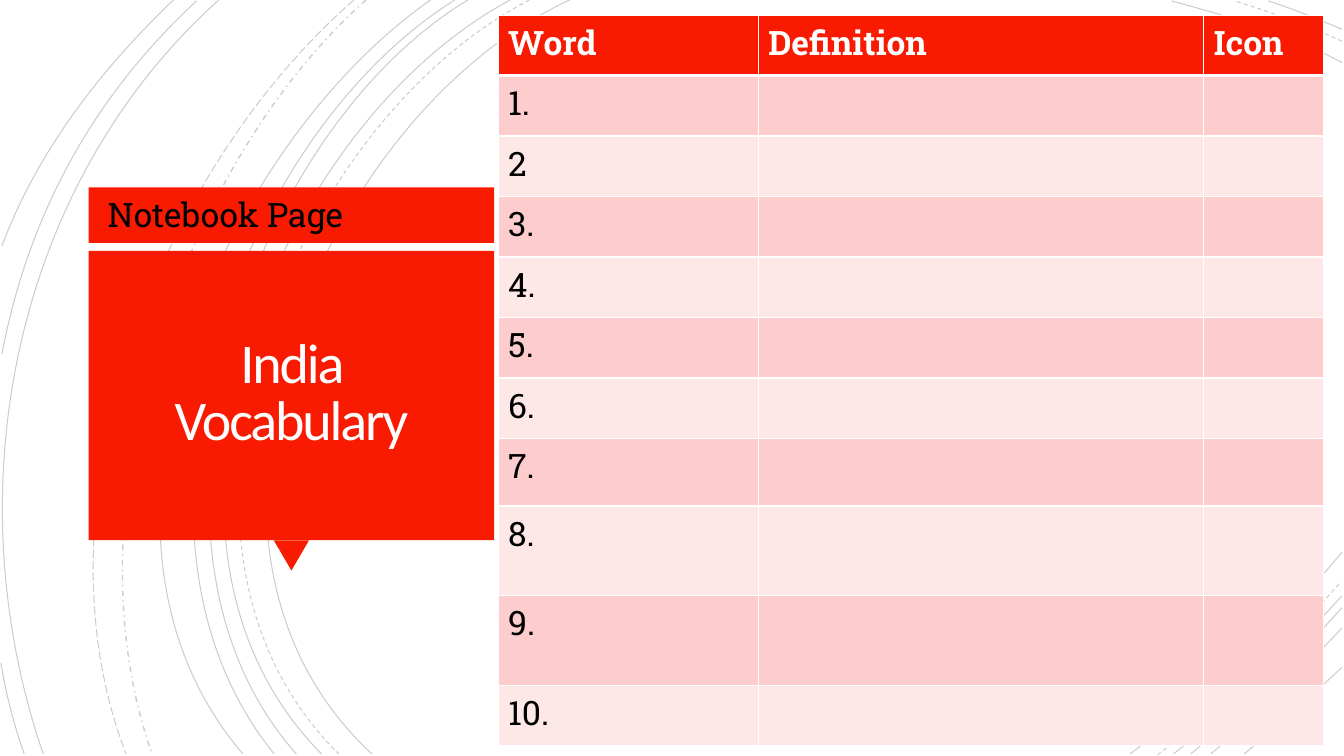
from lxml.etree import SubElement
from pptx import Presentation
from pptx.dml.color import RGBColor
from pptx.enum.dml import MSO_LINE
from pptx.enum.shapes import MSO_SHAPE
from pptx.enum.text import MSO_ANCHOR, PP_ALIGN
from pptx.oxml.ns import qn
from pptx.util import Inches, Pt

RED, WHITE, BLACK = "F81B02", "FFFFFF", "000000"
BANDS = ("FCCDCC", "FEE8E7")
SLAB = "Roboto Slab"

# Each arc: start, two control points, end
SOLID_ARCS = [
    [(5.65, 0), (3.15, 1.15), (1.43, 5.4), (3.69, 7.48)],
    [(13.31, 0.62), (12.78, 0.34), (12.18, 0.16), (11.62, 0.01)],
    [(11.21, 7.48), (11.97, 6.9), (12.69, 6.22), (13.31, 5.48)],
    [(5.06, 0), (2.7, 1.27), (1.1, 5.37), (3.19, 7.48)],
    [(13.31, 0.29), (13.07, 0.19), (12.83, 0.09), (12.58, 0.01)],
    [(11.64, 7.48), (12.23, 7.01), (12.8, 6.48), (13.31, 5.91)],
    [(4.64, 0), (2.44, 1.33), (1.1, 5.41), (2.94, 7.48)],
    [(11.81, 7.48), (12.34, 7.04), (12.84, 6.55), (13.31, 6.03)],
    [(4.51, 0), (2.31, 1.38), (0.97, 5.33), (2.72, 7.48)],
    [(12.01, 7.48), (12.46, 7.09), (12.9, 6.67), (13.31, 6.23)],
    [(4.27, 0), (2.17, 1.47), (0.53, 5.29), (2.41, 7.48)],
    [(12.34, 7.48), (12.67, 7.21), (12.99, 6.92), (13.31, 6.62)],
    [(2.17, 0), (0.11, 1.85), (-0.46, 4.9), (0.43, 7.48)],
    [(1.95, 0.01), (0.92, 0.96), (0.28, 2.14), (0.02, 3.51)],
    [(0.01, 6.58), (0.06, 6.89), (0.14, 7.19), (0.24, 7.48)],
    [(1.72, 0), (1, 0.69), (0.37, 1.5), (0.02, 2.44)],
]
DASHED_ARCS = [
    [(5.25, 0), (2.85, 1.25), (1.23, 5.37), (3.36, 7.48)],
    [(13.31, 0.41), (12.97, 0.25), (12.6, 0.12), (12.25, 0.01)],
    [(11.48, 7.49), (12.13, 6.98), (12.75, 6.4), (13.3, 5.77)],
]
DASH_DOT_ARC = [(3.63, 0), (1.76, 1.66), (0.65, 5.09), (1.51, 7.48)]
LONG_DASH_ARC = [(3.51, 0), (1.57, 1.69), (0.29, 4.99), (1.25, 7.48)]


def rgb(value):
    return RGBColor.from_string(value)


def write(frame, text, size=24, font=SLAB, color=BLACK, bold=False,
          align=PP_ALIGN.LEFT, line_spacing=None, tracking=None):
    paragraph = frame.paragraphs[0]
    paragraph.alignment = align
    paragraph.line_spacing = line_spacing
    run = paragraph.add_run()
    run.text = text
    run.font.size, run.font.name, run.font.bold = Pt(size), font, bold
    run.font.color.rgb = rgb(color)
    if tracking is not None:
        run.font._element.set("spc", str(round(tracking * 100)))


def add_text(slide, box, text, inset=None, anchor=MSO_ANCHOR.TOP, **style):
    frame = slide.shapes.add_textbox(*map(Inches, box)).text_frame
    frame.word_wrap = True
    frame.vertical_anchor = anchor
    if inset is not None:
        frame.margin_left = frame.margin_right = Inches(inset)
        frame.margin_top = frame.margin_bottom = Inches(inset)
    write(frame, text, **style)


def add_arc(slide, points, dash=MSO_LINE.SOLID, width=0.75):
    """Draw one faint cubic curve."""
    start, *rest = [(Inches(x), Inches(y)) for x, y in points]
    builder = slide.shapes.build_freeform(*start)
    builder.add_line_segments(rest, close=False)
    arc = builder.convert_to_shape()
    outline = arc._element.spPr.find(".//" + qn("a:path"))
    curve = SubElement(outline, qn("a:cubicBezTo"))
    for segment in outline.findall(qn("a:lnTo")):
        curve.append(segment[0])
        outline.remove(segment)
    arc.shadow.inherit = False
    arc.fill.background()
    arc.line.width = Pt(width)
    arc.line.color.rgb = rgb(BLACK)
    arc.line.dash_style = dash
    black = arc._element.spPr.find(qn("a:ln")).find(".//" + qn("a:srgbClr"))
    SubElement(black, qn("a:alpha"), val="20000")


def add_background(slide):
    for points in SOLID_ARCS:
        add_arc(slide, points)
    for points in DASHED_ARCS:
        add_arc(slide, points, MSO_LINE.DASH)
    add_arc(slide, DASH_DOT_ARC, MSO_LINE.DASH_DOT, width=1)
    add_arc(slide, LONG_DASH_ARC, MSO_LINE.LONG_DASH)


def add_red_shape(slide, kind, box):
    shape = slide.shapes.add_shape(kind, *map(Inches, box))
    shape.shadow.inherit = False
    shape.fill.solid()
    shape.fill.fore_color.rgb = rgb(RED)
    shape.line.fill.background()
    return shape


def add_title_panel(slide, left, top, width, height):
    """Heading strip above a callout whose pointer hangs from its bottom edge."""
    strip, gap, pointer_width, pointer_height = 0.55, 0.08, 0.35, 0.3
    callout_top = top + strip + gap
    callout_height = height - strip - gap - pointer_height
    add_red_shape(slide, MSO_SHAPE.RECTANGLE, (left, top, width, strip))
    pointer = add_red_shape(slide, MSO_SHAPE.ISOSCELES_TRIANGLE, (
        left + (width - pointer_width) / 2, callout_top + callout_height,
        pointer_width, pointer_height))
    pointer.rotation = 180
    add_red_shape(slide, MSO_SHAPE.RECTANGLE,
                  (left, callout_top, width, callout_height))
    text_left, text_width = left + 0.09, width - 0.18
    add_text(slide, (text_left, callout_top + 0.08, text_width, callout_height - 0.18),
             "India Vocabulary", inset=0.25, anchor=MSO_ANCHOR.MIDDLE, size=40,
             font="Calibri", color="FFFEFF", align=PP_ALIGN.CENTER,
             line_spacing=0.85, tracking=-1.5)
    add_text(slide, (text_left, top + 0.01, text_width, 0.5), "Notebook Page")


def style_cell(cell, fill, top=1, bottom=1):
    cell.fill.solid()
    cell.fill.fore_color.rgb = rgb(fill)
    properties = cell._tc.get_or_add_tcPr()
    widths = {"a:lnL": 1, "a:lnR": 1, "a:lnT": top, "a:lnB": bottom}
    for position, (side, width) in enumerate(widths.items()):
        border = SubElement(properties, qn(side), w=str(Pt(width)))
        SubElement(SubElement(border, qn("a:solidFill")), qn("a:srgbClr"), val=WHITE)
        properties.insert(position, border)


def add_vocabulary_table(slide, left, top, width, height):
    headings = ["Word", "Definition", "Icon"]
    labels = ["1.", "2"] + [f"{number}." for number in range(3, 11)]
    column_widths = [2.58, 4.42, 1.19]
    row_heights = [0.6] * 7 + [0.67, 0.89, 0.89, 0.6]
    table = slide.shapes.add_table(
        len(row_heights), len(headings),
        *map(Inches, (left, top, width, height))).table
    for column, column_width in zip(table.columns, column_widths):
        column.width = Inches(column_width)
    for row, row_height in zip(table.rows, row_heights):
        row.height = Inches(row_height)
    for cell, heading in zip(table.rows[0].cells, headings):
        style_cell(cell, RED, bottom=3)
        write(cell.text_frame, heading, color=WHITE, bold=True)
    for index, label in enumerate(labels):
        cells = list(table.rows[index + 1].cells)
        for cell in cells:
            style_cell(cell, BANDS[index % 2], top=3 if index == 0 else 1)
        write(cells[0].text_frame, label)


def main():
    presentation = Presentation()
    presentation.slide_width = Inches(13.33)
    presentation.slide_height = Inches(7.5)
    slide = presentation.slides.add_slide(presentation.slide_layouts[6])
    add_background(slide)
    add_title_panel(slide, 0.88, 1.86, 4.02, 3.8)
    add_vocabulary_table(slide, 4.94, 0.15, 8.19, 7.25)
    presentation.save("out.pptx")


if __name__ == "__main__":
    main()
